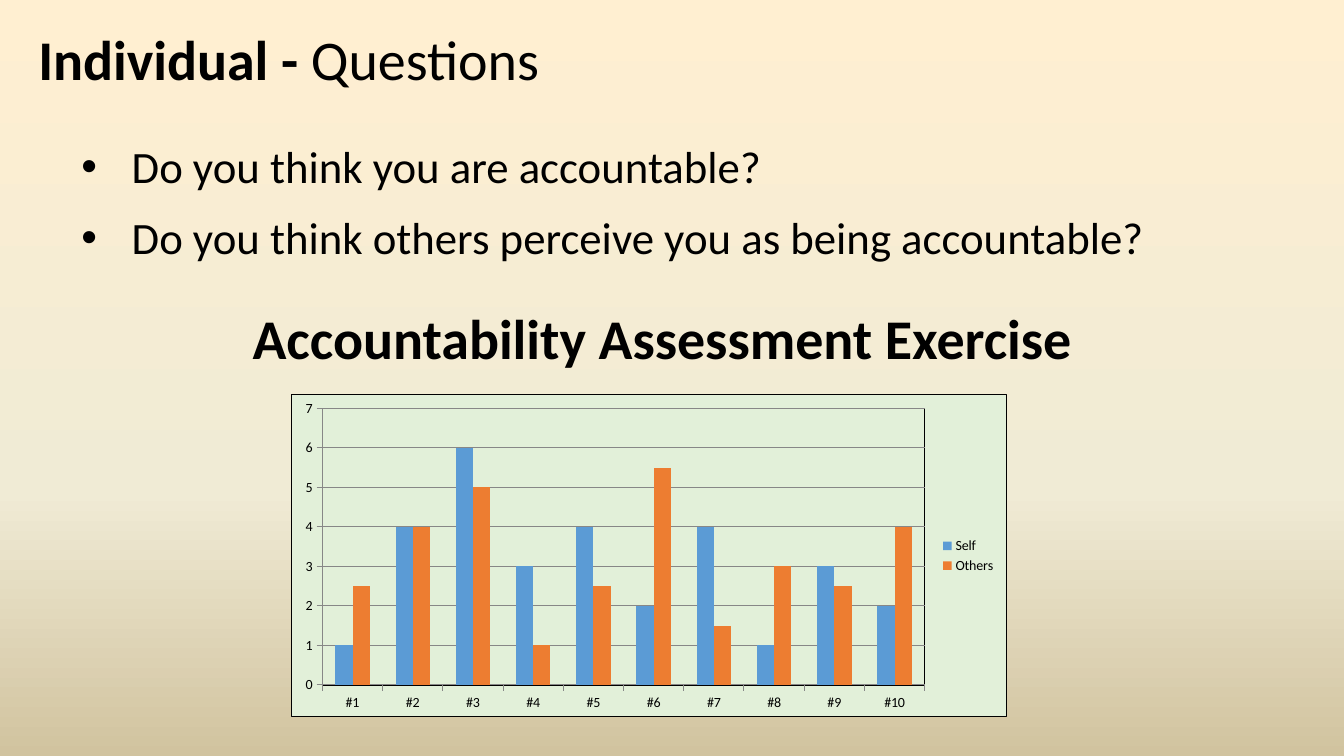
import copy
from collections import namedtuple
from dataclasses import dataclass

import lxml.etree
import pptx
import pptx.chart.data
import pptx.dml.color
import pptx.enum.chart
import pptx.enum.text
import pptx.oxml
import pptx.oxml.ns
import pptx.util

Cm, Pt = pptx.util.Cm, pptx.util.Pt
qn = pptx.oxml.ns.qn
Box = namedtuple("Box", "left top width height")


@dataclass(frozen=True)
class Theme:
    font: str = "Calibri"
    heading: int = 40
    body: int = 32
    label: int = 10
    ink: str = "000000"
    grid: str = "878787"
    panel: str = "E2F0D9"
    bars: tuple = ("5B9BD5", "ED7D31")
    backdrop: tuple = ((0, "FFEFD1"), (0.65, "F0EBD5"), (1, "D1C39F"))


THEME = Theme()
QUESTIONS = (
    "Do you think you are accountable?",
    "Do you think others perceive you as being accountable?",
)
SCORES = {
    "Self": (1, 4, 6, 3, 4, 2, 4, 1, 3, 2),
    "Others": (2.5, 4, 5, 1, 2.5, 5.5, 1.5, 3, 2.5, 4),
}


def rgb(colour):
    return pptx.dml.color.RGBColor.from_string(colour)


def apply(target, formats):
    for name, value in formats.items():
        setattr(target, name, value)


def style_font(font, size, **extra):
    apply(font, {"name": THEME.font, "size": Pt(size), **extra})
    font.color.rgb = rgb(THEME.ink)


def place(shape, box):
    apply(shape, {side: Cm(value) for side, value in box._asdict().items()})


def prepare_frame(frame):
    apply(frame, {
        "word_wrap": True,
        "auto_size": pptx.enum.text.MSO_AUTO_SIZE.SHAPE_TO_FIT_TEXT,
        "vertical_anchor": pptx.enum.text.MSO_ANCHOR.TOP,
    })


def add_run(paragraph, wording, size, bold=False):
    run = paragraph.add_run()
    run.text = wording
    style_font(run.font, size, bold=bold)


def paint_background(slide):
    fill = slide.background.fill
    fill.gradient()
    fill.gradient_angle = 270
    stop_list = slide.element.find(".//" + qn("a:gsLst"))
    stop_list.append(copy.deepcopy(stop_list[-1]))
    for stop, (position, colour) in zip(fill.gradient_stops, THEME.backdrop):
        stop.position = position
        stop.color.rgb = rgb(colour)


def fill_title(slide, box):
    title = slide.shapes.title
    place(title, box)
    prepare_frame(title.text_frame)
    heading = title.text_frame.paragraphs[0]
    heading.alignment = pptx.enum.text.PP_ALIGN.LEFT
    add_run(heading, "Individual - ", THEME.heading, bold=True)
    add_run(heading, "Questions", THEME.heading)


def add_text_frame(slide, box):
    frame = slide.shapes.add_textbox(*map(Cm, box)).text_frame
    prepare_frame(frame)
    return frame


def add_questions(slide, box):
    frame = add_text_frame(slide, box)
    indent = Cm(1.27)
    for index, wording in enumerate(QUESTIONS):
        question = frame.add_paragraph() if index else frame.paragraphs[0]
        question.space_after = Pt(12)
        add_run(question, wording, THEME.body)
        properties = question._p.get_or_add_pPr()
        properties.set("marL", str(indent))
        properties.set("indent", str(-indent))
        lxml.etree.SubElement(properties, qn("a:buFont")).set("typeface", "Arial")
        lxml.etree.SubElement(properties, qn("a:buChar")).set("char", "•")


def add_exercise_heading(slide, box):
    heading = add_text_frame(slide, box).paragraphs[0]
    heading.alignment = pptx.enum.text.PP_ALIGN.CENTER
    add_run(heading, "Accountability Assessment Exercise", THEME.heading, bold=True)


def outline_xml(fill):
    return pptx.oxml.parse_xml(
        f'<c:spPr {pptx.oxml.ns.nsdecls("c", "a")}>{fill}<a:ln w="9525"><a:solidFill>'
        f'<a:srgbClr val="{THEME.ink}"/></a:solidFill></a:ln></c:spPr>')


def frame_chart(chart):
    """Fill and outline the chart, and fix where its plot area sits."""
    chart_part = chart._chartSpace.find(qn("c:chart"))
    chart_part.addnext(outline_xml(
        f'<a:solidFill><a:srgbClr val="{THEME.panel}"/></a:solidFill>'))
    plot_area = chart_part.find(qn("c:plotArea"))
    plot_area.append(outline_xml("<a:noFill/>"))
    for old_layout in plot_area.findall(qn("c:layout")):
        plot_area.remove(old_layout)
    layout = lxml.etree.Element(qn("c:layout"))
    manual = lxml.etree.SubElement(layout, qn("c:manualLayout"))
    settings = {"layoutTarget": "inner", "xMode": "edge", "yMode": "edge",
                "x": 0.043, "y": 0.043, "w": 0.843, "h": 0.858}
    for name, value in settings.items():
        lxml.etree.SubElement(manual, qn(f"c:{name}")).set("val", str(value))
    plot_area.insert(0, layout)


def add_score_chart(slide, box):
    data = pptx.chart.data.CategoryChartData()
    data.categories = [f"#{number}" for number in range(1, 11)]
    for rater, scores in SCORES.items():
        data.add_series(rater, scores)
    chart = slide.shapes.add_chart(
        pptx.enum.chart.XL_CHART_TYPE.COLUMN_CLUSTERED, *map(Cm, box), data).chart
    apply(chart, {"has_title": False, "has_legend": True})
    style_font(chart.font, THEME.label)
    apply(chart.legend, {"position": pptx.enum.chart.XL_LEGEND_POSITION.RIGHT,
                         "include_in_layout": False})
    plot = chart.plots[0]
    apply(plot, {"gap_width": 150, "vary_by_categories": False})
    for bars, colour in zip(plot.series, THEME.bars):
        bars.format.fill.solid()
        bars.format.fill.fore_color.rgb = rgb(colour)
        bars.invert_if_negative = False
    apply(chart.value_axis, {"minimum_scale": 0, "maximum_scale": 7, "major_unit": 1,
                             "has_major_gridlines": True})
    for axis in (chart.category_axis, chart.value_axis):
        axis.major_tick_mark = pptx.enum.chart.XL_TICK_MARK.OUTSIDE
    for ruled in (chart.category_axis, chart.value_axis, chart.value_axis.major_gridlines):
        ruled.format.line.width = Pt(0.75)
        ruled.format.line.color.rgb = rgb(THEME.grid)
    frame_chart(chart)


def main():
    deck = pptx.Presentation()
    apply(deck, {"slide_width": Cm(33.87), "slide_height": Cm(19.05)})
    slide = deck.slides.add_slide(deck.slide_layouts.get_by_name("Title Only"))
    paint_background(slide)
    fill_title(slide, Box(0.71, 0.48, 17.22, 1.96))
    add_questions(slide, Box(1.8, 3.38, 30.23, 3.43))
    add_exercise_heading(slide, Box(2.06, 7.52, 29.26, 1.96))
    add_score_chart(slide, Box(7.34, 9.93, 18.03, 8.15))
    deck.save("out.pptx")


if __name__ == "__main__":
    main()
